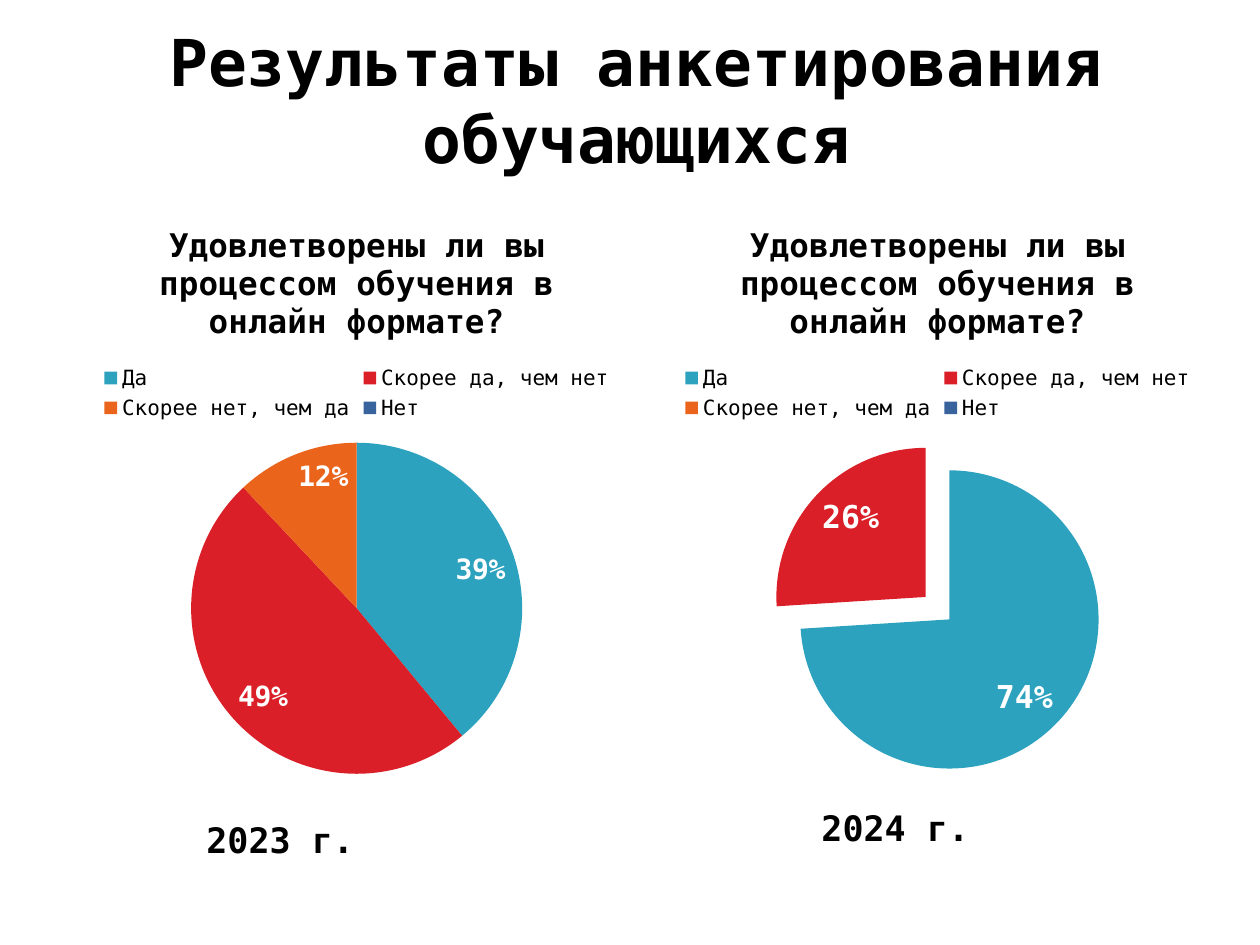
from dataclasses import dataclass

from lxml.etree import SubElement
from pptx import Presentation
from pptx.chart.data import CategoryChartData
from pptx.chart.series import PieSeries
from pptx.dml.color import RGBColor
from pptx.enum.chart import XL_CHART_TYPE, XL_LABEL_POSITION, XL_LEGEND_POSITION
from pptx.enum.text import MSO_ANCHOR, PP_ALIGN
from pptx.oxml.ns import qn
from pptx.slide import Slide
from pptx.text.text import Font, TextFrame
from pptx.util import Cm, Pt


@dataclass(frozen=True)
class Theme:
    font: str = "DejaVu Sans Mono"
    ink: str = "000000"
    paper: str = "FFFFFF"
    slices: tuple[str, ...] = ("2DA2BF", "DA1F28", "EB641B", "39639D")
    title_size: float = 36.9
    year_size: float = 20
    question_size: float = 18.6
    legend_size: float = 12
    chart_size: float = 10


@dataclass(frozen=True)
class Frame:
    left: float
    top: float
    width: float
    height: float

    def lengths(self) -> tuple[Cm, Cm, Cm, Cm]:
        return Cm(self.left), Cm(self.top), Cm(self.width), Cm(self.height)


@dataclass(frozen=True)
class Survey:
    year: str
    shares: tuple[int | None, ...]
    chart_frame: Frame
    year_frame: Frame
    label_size: float
    explosion: int = 0


THEME = Theme()
HEADING = "Результаты анкетирования обучающихся"
QUESTION = "Удовлетворены ли вы процессом обучения в онлайн формате?"
ANSWERS = ("Да", "Скорее да, чем нет", "Скорее нет, чем да", "Нет")
SURVEYS = (
    Survey("2024 г.", (74, 26, None, None), Frame(12.7, 4.01, 12.4, 11.94),
           Frame(16.31, 16.13, 5.21, 1.4), label_size=18, explosion=11),
    Survey("2023 г.", (39, 49, 12, None), Frame(1.27, 4.01, 11.84, 11.94),
           Frame(3.91, 16.38, 5.99, 1.4), label_size=16),
)


def style_font(font: Font, size: float, color: str = THEME.ink, bold: bool = False) -> None:
    font.name = THEME.font
    font.size = Pt(size)
    font.bold = bold
    font.color.rgb = RGBColor.from_string(color)


def write_bold(text_frame: TextFrame, text: str, size: float, align: PP_ALIGN) -> None:
    para = text_frame.paragraphs[0]
    para.alignment = align
    span = para.add_run()
    span.text = text
    style_font(span.font, size, bold=True)


def add_heading(page: Slide) -> None:
    title = page.shapes.title
    title.left, title.top, title.width, title.height = Frame(1.4, 0.41, 22.86, 3.18).lengths()
    title.text_frame.word_wrap = True
    title.text_frame.vertical_anchor = MSO_ANCHOR.MIDDLE
    write_bold(title.text_frame, HEADING, THEME.title_size, PP_ALIGN.CENTER)


def add_year(page: Slide, survey: Survey) -> None:
    box = page.shapes.add_textbox(*survey.year_frame.lengths())
    box.text_frame.word_wrap = True
    write_bold(box.text_frame, survey.year, THEME.year_size, PP_ALIGN.LEFT)


def style_slices(series: PieSeries, survey: Survey) -> None:
    for index, color in enumerate(THEME.slices):
        fill = series.points[index].format.fill
        fill.solid()
        fill.fore_color.rgb = RGBColor.from_string(color)

    labels = series.data_labels
    style_font(labels.font, survey.label_size, THEME.paper, bold=True)
    labels.number_format = "0%"
    labels.number_format_is_linked = False
    labels.show_value = False
    labels.show_percentage = True
    labels.position = XL_LABEL_POSITION.INSIDE_END

    # Answers nobody chose get no label
    label_list = series._element.find(qn("c:dLbls"))
    missing = [index for index, share in enumerate(survey.shares) if share is None]
    for place, index in enumerate(missing):
        label = SubElement(label_list, qn("c:dLbl"))
        SubElement(label, qn("c:idx")).set("val", str(index))
        SubElement(label, qn("c:delete")).set("val", "1")
        label_list.insert(place, label)

    # Pull the slices apart
    if survey.explosion:
        explosion = SubElement(series._element, qn("c:explosion"))
        explosion.set("val", str(survey.explosion))
        series._element.find(qn("c:dPt")).addprevious(explosion)


def add_pie(page: Slide, survey: Survey) -> None:
    chart_data = CategoryChartData()
    chart_data.categories = ANSWERS
    chart_data.add_series(QUESTION, survey.shares)
    chart = page.shapes.add_chart(
        XL_CHART_TYPE.PIE, *survey.chart_frame.lengths(), chart_data).chart
    style_font(chart.font, THEME.chart_size)

    chart.has_title = True
    write_bold(chart.chart_title.text_frame, QUESTION, THEME.question_size, PP_ALIGN.CENTER)

    chart.has_legend = True
    chart.legend.position = XL_LEGEND_POSITION.TOP
    chart.legend.include_in_layout = False
    style_font(chart.legend.font, THEME.legend_size)

    chart.plots[0].vary_by_categories = True
    style_slices(chart.plots[0].series[0], survey)


def main() -> None:
    deck = Presentation()
    deck.slide_width, deck.slide_height = Cm(25.4), Cm(19.05)
    page = deck.slides.add_slide(deck.slide_layouts[5])

    add_heading(page)
    for survey in SURVEYS:
        add_year(page, survey)
        add_pie(page, survey)

    deck.save("out.pptx")


if __name__ == "__main__":
    main()
